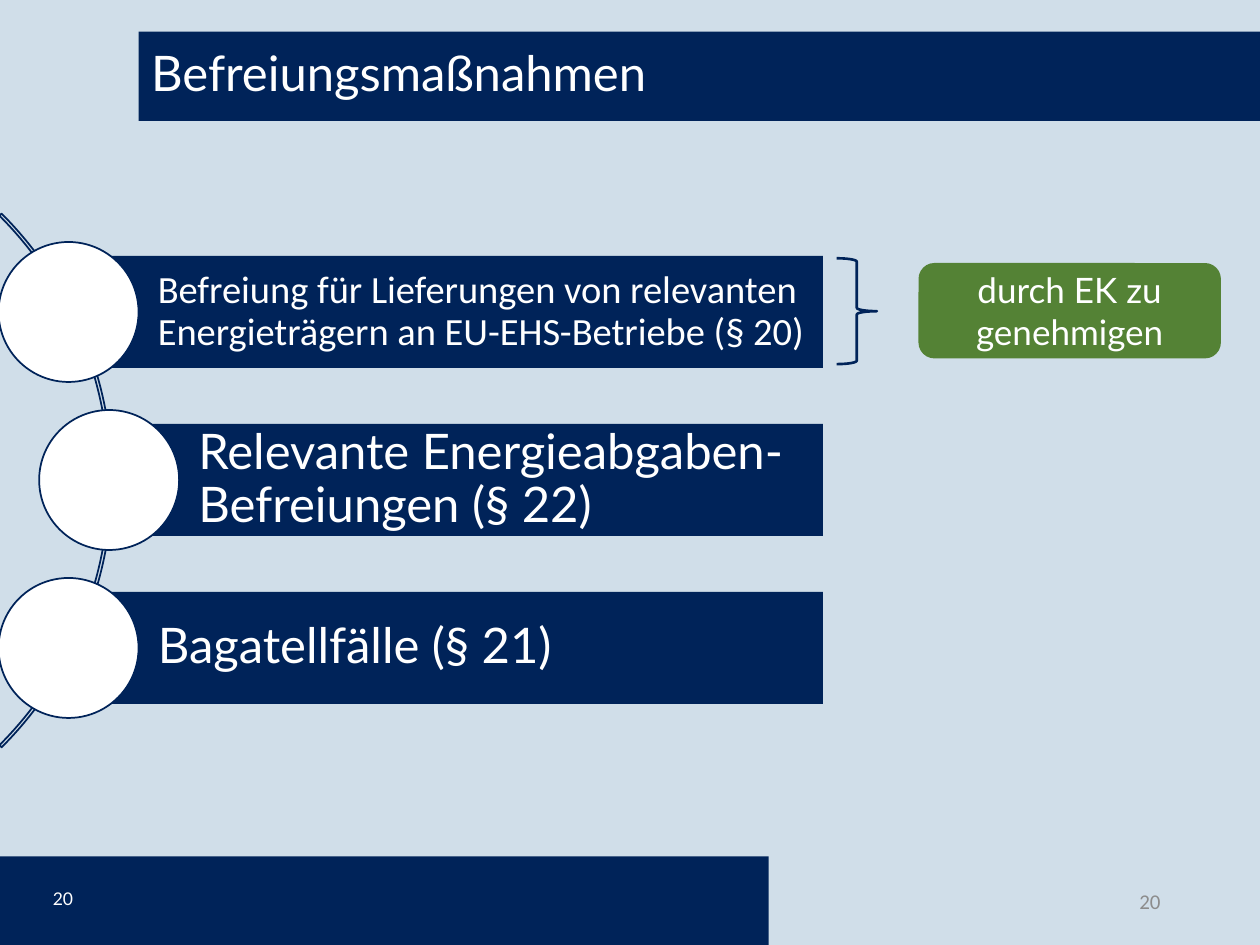
import pptx
import pptx.util
import pptx.dml.color
import pptx.enum.shapes
import pptx.enum.text

Pt = pptx.util.Pt
Kind = pptx.enum.shapes.MSO_SHAPE
Align = pptx.enum.text.PP_ALIGN
NAVY, WHITE, GREEN, GREY, PALE = "002359", "FFFFFF", "548235", "8C8C8C", "D0DEE9"


def color(code):
    return pptx.dml.color.RGBColor.from_string(code)


def place(shape, box):
    shape.left, shape.top, shape.width, shape.height = map(Pt, box)


def shape(slide, kind, box, fill=None, line=None, width=1):
    item = slide.shapes.add_shape(kind, *map(Pt, box))
    item.shadow.inherit = False
    if fill:
        item.fill.solid()
        item.fill.fore_color.rgb = color(fill)
    else:
        item.fill.background()
    if line:
        item.line.color.rgb = color(line)
        item.line.width = Pt(width)
    else:
        item.line.fill.background()
    return item


def write(item, text, size, font="Lato", ink=WHITE, align=Align.LEFT,
          inset=(7.2, 3.6, 7.2, 3.6), space=1):
    frame = item.text_frame
    frame.word_wrap = True
    frame.auto_size = pptx.enum.text.MSO_AUTO_SIZE.NONE
    frame.vertical_anchor = pptx.enum.text.MSO_ANCHOR.MIDDLE
    (frame.margin_left, frame.margin_top,
     frame.margin_right, frame.margin_bottom) = map(Pt, inset)
    frame.text = text
    para = frame.paragraphs[0]
    para.alignment = align
    para.line_spacing = space
    para.font.size = Pt(size)
    para.font.name = font
    para.font.color.rgb = color(ink)


def number(slide, box, size, font, ink, inset):
    item = slide.shapes.add_textbox(*map(Pt, box))
    write(item, "20", size, font, ink, Align.RIGHT, inset)


def head(slide, text):
    band = shape(slide, Kind.RECTANGLE, (79.2, 18, 640.8, 51.1), NAVY)
    title = slide.shapes.title
    title._element.addprevious(band._element)
    place(title, (79.2, 17.3, 620.6, 51.8))
    write(title, text, 28, space=0.9)


def foot(slide):
    number(slide, (508.3, 500.4, 162, 28.8), 12, "Calibri", GREY,
           (7.2, 3.6, 7.2, 3.6))
    shape(slide, Kind.RECTANGLE, (0, 489.4, 439.2, 50.6), NAVY)
    number(slide, (14.4, 499, 32.4, 28.8), 10, "Lato", WHITE, (5, 2.9, 5, 2.9))


def arc(slide):
    item = shape(slide, Kind.BLOCK_ARC, (-367.2, 58.9, 431.3, 431.3), None, NAVY)
    for i, value in enumerate((189, 27, 0.004)):
        item.adjustments[i] = value


def entry(slide, row, left, text, size, font, pad):
    high, disc, right = 64, 80, 470.3
    top = 146.3 + row * 96
    bar = shape(slide, Kind.RECTANGLE, (left, top, right - left, high), NAVY)
    write(bar, text, size, font, inset=(51, pad, pad, pad), space=0.9)
    shape(slide, Kind.OVAL,
          (left - disc / 2, top + (high - disc) / 2, disc, disc), WHITE, NAVY)


def main():
    deck = pptx.Presentation()
    deck.slide_width, deck.slide_height = Pt(720), Pt(540)
    slide = deck.slides.add_slide(deck.slide_layouts[5])
    slide.background.fill.solid()
    slide.background.fill.fore_color.rgb = color(PALE)
    head(slide, "Befreiungsmaßnahmen")
    foot(slide)
    arc(slide)
    rows = (
        (39.2, "Befreiung für Lieferungen von relevanten "
               "Energieträgern an EU-EHS-Betriebe (§ 20)", 22, "Calibri", 4.4),
        (62.4, "Relevante Energieabgaben-Befreiungen (§ 22)", 28, "Lato", 5.6),
        (39.2, "Bagatellfälle (§ 21)", 28, "Lato", 5.6),
    )
    for row, item in enumerate(rows):
        entry(slide, row, *item)
    shape(slide, Kind.RIGHT_BRACE, (478.1, 147.6, 23, 60.5), None, NAVY, 1.5)
    note = shape(slide, Kind.ROUNDED_RECTANGLE, (524.9, 150.3, 172.8, 54.5), GREEN)
    write(note, "durch EK zu genehmigen", 20, align=Align.CENTER)
    deck.save("out.pptx")


if __name__ == "__main__":
    main()
